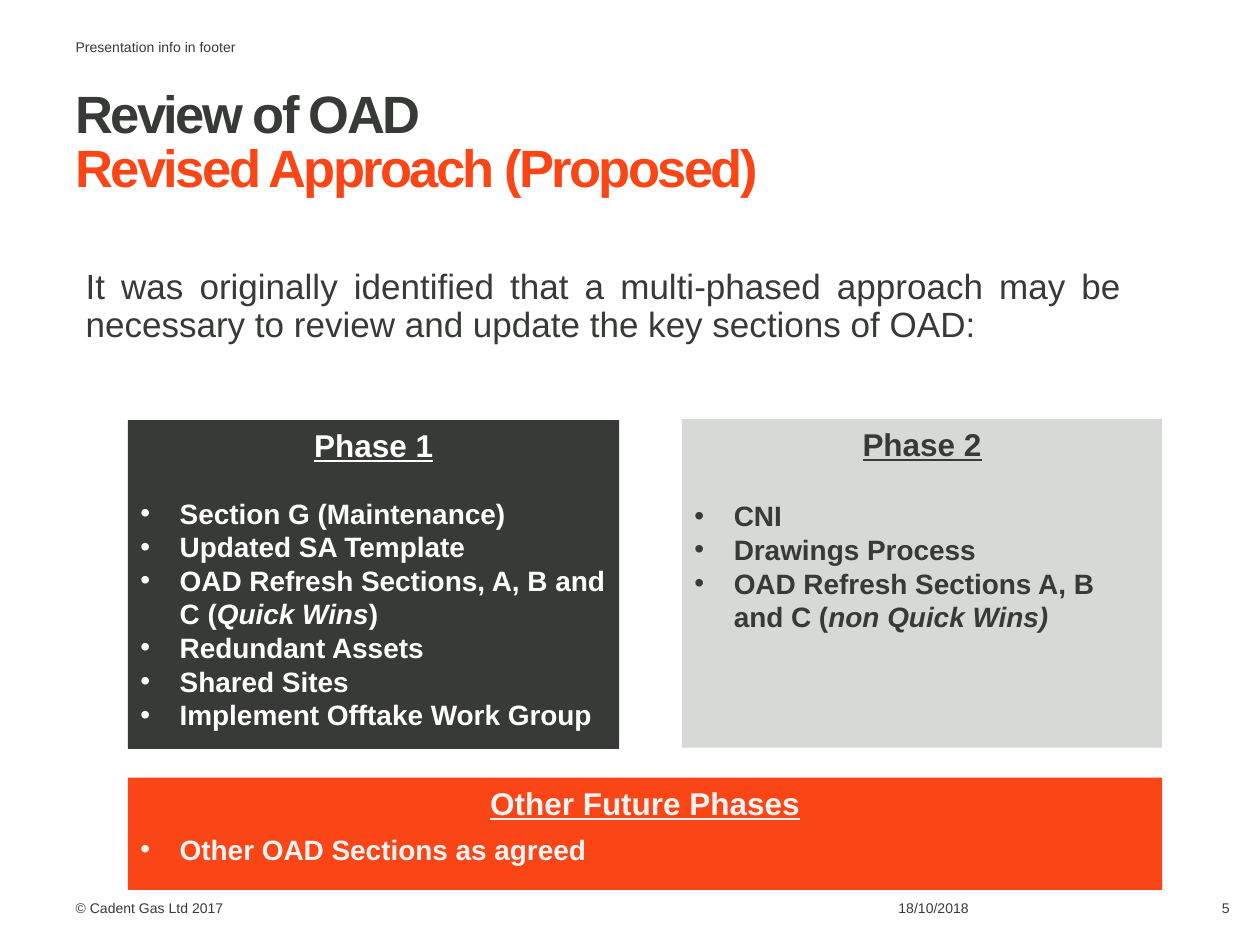
from dataclasses import dataclass
from typing import NamedTuple

import lxml.etree
import pptx
import pptx.dml.color
import pptx.enum.shapes
import pptx.enum.text
import pptx.oxml.ns
import pptx.util

Pt = pptx.util.Pt
Color = pptx.dml.color.RGBColor
Align = pptx.enum.text.PP_ALIGN
Anchor = pptx.enum.text.MSO_ANCHOR


@dataclass(frozen=True)
class Theme:
    font: str = "Arial"
    dark: Color = Color.from_string("373A36")
    grey: Color = Color.from_string("D6D9D6")
    orange: Color = Color.from_string("FA4616")
    white: Color = Color.from_string("FFFFFF")
    pale: Color = Color.from_string("F2F2F2")
    small: float = 8
    item: float = 16
    head: float = 18
    body: float = 20
    title: float = 30


class Area(NamedTuple):
    left: float
    top: float
    width: float
    height: float


class Note(NamedTuple):
    words: str
    area: Area
    anchor: Anchor = Anchor.BOTTOM
    align: Align = Align.LEFT


class Item(NamedTuple):
    plain: str
    slant: str = ""
    tail: str = ""


class Panel(NamedTuple):
    head: str
    items: tuple[Item, ...]
    area: Area
    fill: Color
    ink: Color
    gap: float


THEME = Theme()
INDENT = 22.5

NOTES = (
    Note("© Cadent Gas Ltd 2017", Area(43.2, 501.8, 143.3, 21.6)),
    Note("18/10/2018", Area(513.4, 501.8, 82, 21.6)),
    Note("Presentation info in footer", Area(43.2, 22.3, 334, 21.6), Anchor.TOP),
    Note("5", Area(651.6, 501.8, 51.1, 21.6), align=Align.RIGHT),
)

PANELS = (
    Panel(
        "Phase 1",
        (
            Item("Section G (Maintenance)"),
            Item("Updated SA Template"),
            Item("OAD Refresh Sections, A, B and C (", "Quick Wins", ")"),
            Item("Redundant Assets"),
            Item("Shared Sites"),
            Item("Implement Offtake Work Group"),
        ),
        Area(73.1, 240, 280.8, 187.9), THEME.dark, THEME.white, 18.4,
    ),
    Panel(
        "Phase 2",
        (
            Item("CNI"),
            Item("Drawings Process"),
            Item("OAD Refresh Sections A, B and C (", "non Quick Wins)"),
        ),
        Area(389.7, 239.3, 274.3, 187.9), THEME.grey, THEME.dark, 20.7,
    ),
    Panel(
        "Other Future Phases",
        (Item("Other OAD Sections as agreed"),),
        Area(73.1, 444.4, 591, 64.1), THEME.orange, THEME.pale, 6,
    ),
)


def add_text(para, words: str, *, size: float, ink: Color, bold: bool = False,
             slant: bool = False, under: bool = False, track: float = 0) -> None:
    run = para.add_run()
    run.text = words
    font = run.font
    font.name, font.size = THEME.font, Pt(size)
    font.bold, font.italic, font.underline = bold, slant, under
    font.color.rgb = ink
    if track:
        run._r.get_or_add_rPr().set("spc", str(int(track * 100)))


def add_box(slide, area: Area, *, inset: bool = False, anchor: Anchor = Anchor.TOP):
    frame = slide.shapes.add_textbox(*map(Pt, area)).text_frame
    frame.word_wrap = True
    frame.vertical_anchor = anchor
    if not inset:
        frame.margin_left = frame.margin_right = 0
        frame.margin_top = frame.margin_bottom = 0
    return frame.paragraphs[0]


def set_bullet(para) -> None:
    props = para._p.get_or_add_pPr()
    props.set("marL", str(Pt(INDENT)))
    props.set("indent", str(-Pt(INDENT)))
    qn = pptx.oxml.ns.qn
    lxml.etree.SubElement(props, qn("a:buFont")).set("typeface", THEME.font)
    lxml.etree.SubElement(props, qn("a:buChar")).set("char", "•")


def draw_note(slide, note: Note) -> None:
    para = add_box(slide, note.area, anchor=note.anchor)
    para.alignment = note.align
    add_text(para, note.words, size=THEME.small, ink=THEME.dark)


def draw_title(slide) -> None:
    para = add_box(slide, Area(43.2, 51.8, 470.2, 104.4))
    para.line_spacing = 0.85
    form = dict(size=THEME.title, bold=True, track=-1.5)
    add_text(para, "Review of OAD", ink=THEME.dark, **form)
    para.add_line_break()
    add_text(para, "Revised Approach (Proposed)", ink=THEME.orange, **form)


def draw_intro(slide) -> None:
    para = add_box(slide, Area(41.8, 150.5, 606.2, 79.2), inset=True)
    para.alignment = Align.JUSTIFY
    para.line_spacing = 0.9
    add_text(para, "It was originally identified that a multi-phased approach may be "
             "necessary to review and update the key sections of OAD:",
             size=THEME.body, ink=THEME.dark)


def draw_panel(slide, panel: Panel) -> None:
    kind = pptx.enum.shapes.MSO_SHAPE.RECTANGLE
    shape = slide.shapes.add_shape(kind, *map(Pt, panel.area))
    shape.shadow.inherit = False
    shape.fill.solid()
    shape.fill.fore_color.rgb = panel.fill
    shape.line.fill.background()
    frame = shape.text_frame
    frame.word_wrap = True
    frame.vertical_anchor = Anchor.TOP
    head = frame.paragraphs[0]
    head.alignment = Align.CENTER
    head.space_after = Pt(panel.gap)
    add_text(head, panel.head, size=THEME.head, ink=panel.ink, bold=True, under=True)
    for item in panel.items:
        para = frame.add_paragraph()
        para.alignment = Align.LEFT
        set_bullet(para)
        for words, slant in zip(item, (False, True, False)):
            if words:
                add_text(para, words, size=THEME.item, ink=panel.ink,
                         bold=True, slant=slant)


def main() -> None:
    deck = pptx.Presentation()
    deck.slide_width, deck.slide_height = Pt(720), Pt(540)
    slide = deck.slides.add_slide(deck.slide_layouts[6])
    for note in NOTES:
        draw_note(slide, note)
    draw_title(slide)
    draw_intro(slide)
    for panel in PANELS:
        draw_panel(slide, panel)
    deck.save("out.pptx")


if __name__ == "__main__":
    main()
